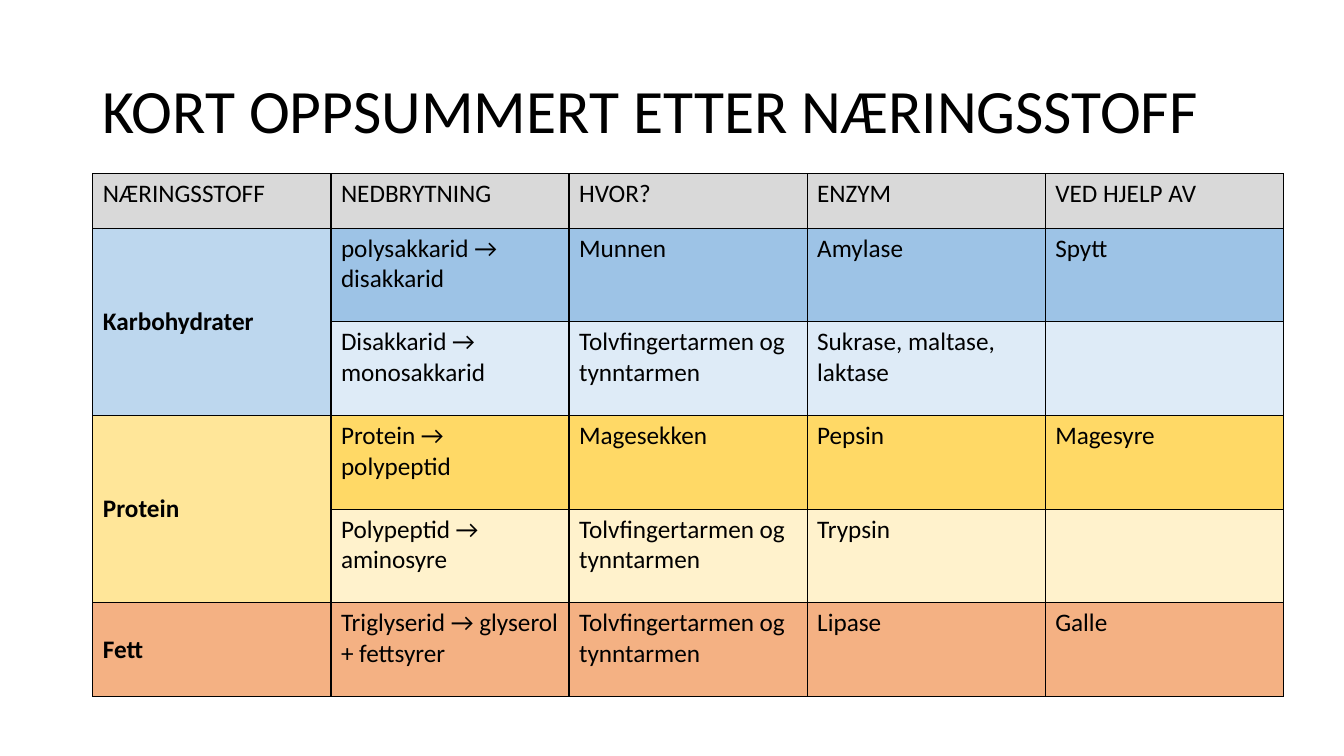
from dataclasses import dataclass

from lxml import etree
from pptx import Presentation
from pptx.dml.color import RGBColor
from pptx.enum.text import MSO_ANCHOR, PP_ALIGN
from pptx.oxml.ns import qn
from pptx.util import Cm, Pt

LEFT = PP_ALIGN.LEFT
TOP, MIDDLE = MSO_ANCHOR.TOP, MSO_ANCHOR.MIDDLE
TITLE_ONLY = 5


@dataclass(frozen=True)
class Theme:
    font: str = "Calibri"
    title_size: int = 44
    cell_size: int = 18
    ink: str = "000000"
    border_width: int = 1
    header: str = "D9D9D9"
    carbs: str = "BDD7EE"
    carbs_dark: str = "9DC3E6"
    carbs_light: str = "DEEBF7"
    protein: str = "FFE699"
    protein_dark: str = "FFD966"
    protein_light: str = "FFF2CC"
    fat: str = "F4B183"


THEME = Theme()
HEADINGS = ["NÆRINGSSTOFF", "NEDBRYTNING", "HVOR?", "ENZYM", "VED HJELP AV"]
INTESTINES = "Tolvfingertarmen og tynntarmen"

# Nutrient, its colour, and its steps: row colour followed by the cell texts
NUTRIENTS = [
    ("Karbohydrater", THEME.carbs, [
        (THEME.carbs_dark, "polysakkarid → disakkarid", "Munnen", "Amylase", "Spytt"),
        (THEME.carbs_light, "Disakkarid → monosakkarid", INTESTINES,
         "Sukrase, maltase, laktase", ""),
    ]),
    ("Protein", THEME.protein, [
        (THEME.protein_dark, "Protein → polypeptid", "Magesekken", "Pepsin", "Magesyre"),
        (THEME.protein_light, "Polypeptid → aminosyre", INTESTINES, "Trypsin", ""),
    ]),
    ("Fett", THEME.fat, [
        (THEME.fat, "Triglyserid → glyserol + fettsyrer", INTESTINES, "Lipase", "Galle"),
    ]),
]


def write(tf, text, *, font, size, color, bold=False, line_spacing=None):
    p = tf.paragraphs[0]
    p.alignment = LEFT
    p.line_spacing = line_spacing
    p.font.size = Pt(size)
    if text:
        r = p.add_run()
        r.text = text
        r.font.name = font
        r.font.size = Pt(size)
        r.font.bold = bold
        r.font.color.rgb = RGBColor.from_string(color)


class SlideBuilder:
    def __init__(self, slide, theme):
        self.s = slide
        self.theme = theme

    def title(self, text, left, top, width, height):
        sp = self.s.shapes.title
        sp.left, sp.top, sp.width, sp.height = Cm(left), Cm(top), Cm(width), Cm(height)
        tf = sp.text_frame
        tf.word_wrap = True
        tf.vertical_anchor = MIDDLE
        write(tf, text, font=self.theme.font, size=self.theme.title_size,
              color=self.theme.ink, line_spacing=0.9)

    def table(self, left, top, col_width, row_heights, cols):
        """Add an empty table without the banded style."""
        frame = self.s.shapes.add_table(
            len(row_heights), cols, Cm(left), Cm(top),
            Cm(col_width * cols), Cm(sum(row_heights)))
        table = frame.table
        table.first_row = table.horz_banding = False
        for column in table.columns:
            column.width = Cm(col_width)
        for row, height in zip(table.rows, row_heights):
            row.height = Cm(height)
        return table

    def cell(self, cell, text, fill, bold=False, anchor=TOP):
        self.borders(cell)
        cell.fill.solid()
        cell.fill.fore_color.rgb = RGBColor.from_string(fill)
        cell.vertical_anchor = anchor
        write(cell.text_frame, text, font=self.theme.font,
              size=self.theme.cell_size, color=self.theme.ink, bold=bold)

    def borders(self, cell):
        tc_pr = cell._tc.get_or_add_tcPr()
        for side in ("a:lnL", "a:lnR", "a:lnT", "a:lnB"):
            ln = etree.SubElement(tc_pr, qn(side), w=str(Pt(self.theme.border_width)))
            fill = etree.SubElement(ln, qn("a:solidFill"))
            etree.SubElement(fill, qn("a:srgbClr"), val=self.theme.ink)


def fill_nutrient_table(builder, table):
    for col, heading in enumerate(HEADINGS):
        builder.cell(table.cell(0, col), heading, THEME.header)
    row = 1
    for name, color, steps in NUTRIENTS:
        first = row
        for step_color, *texts in steps:
            label = name if row == first else ""
            builder.cell(table.cell(row, 0), label, color, bold=True, anchor=MIDDLE)
            for col, text in enumerate(texts, start=1):
                builder.cell(table.cell(row, col), text, step_color)
            row += 1
        if len(steps) > 1:
            table.cell(first, 0).merge(table.cell(row - 1, 0))


def main():
    prs = Presentation()
    prs.slide_width, prs.slide_height = Cm(33.87), Cm(19.05)
    slide = prs.slides.add_slide(prs.slide_layouts[TITLE_ONLY])
    builder = SlideBuilder(slide, THEME)
    builder.title("KORT OPPSUMMERT ETTER NÆRINGSSTOFF", 2.33, 1.01, 29.21, 3.68)
    step_count = sum(len(steps) for _, _, steps in NUTRIENTS)
    table = builder.table(2.34, 4.38, col_width=6,
                          row_heights=[1.37] + [2.36] * step_count, cols=len(HEADINGS))
    fill_nutrient_table(builder, table)
    prs.save("out.pptx")


if __name__ == "__main__":
    main()
